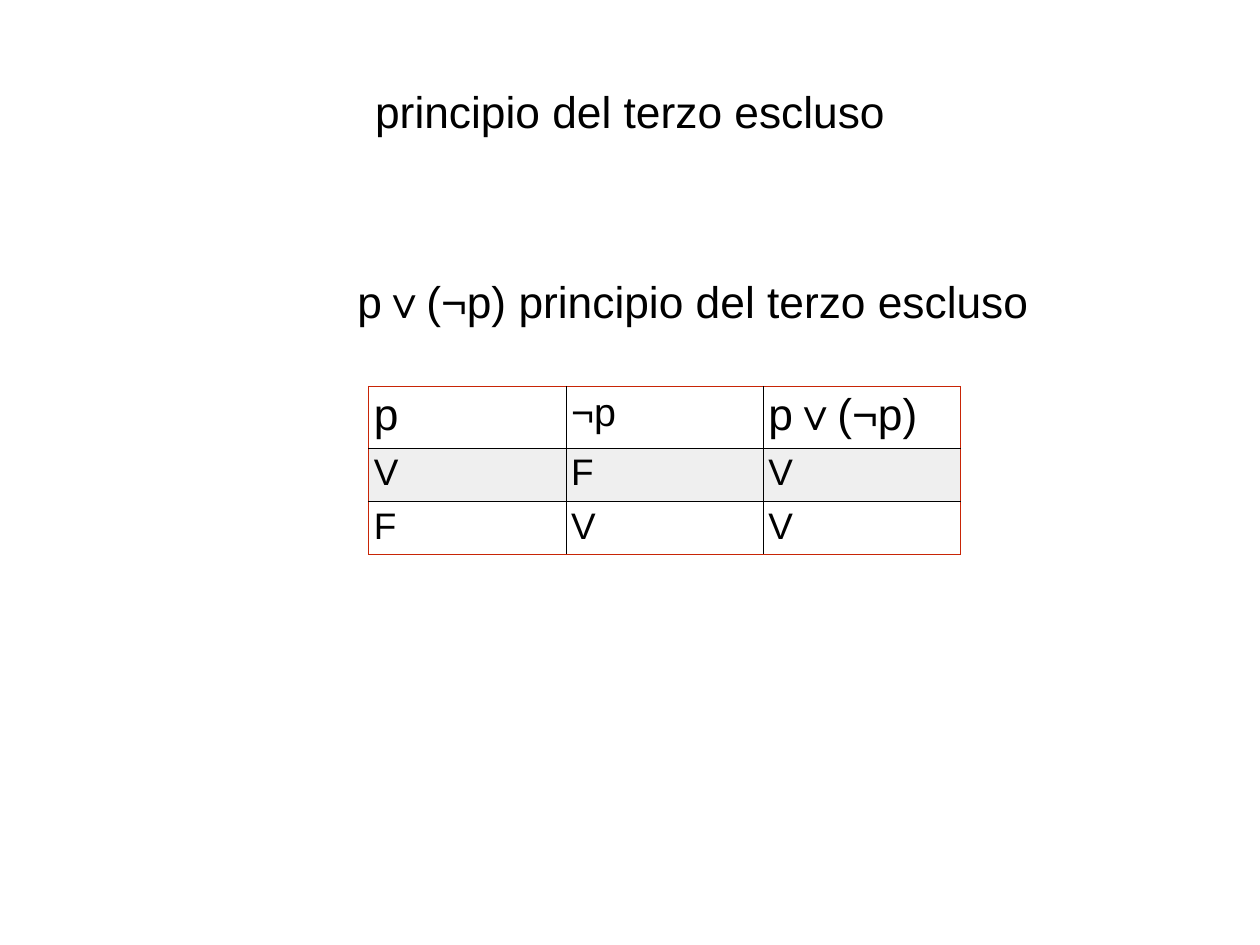
from dataclasses import dataclass

from pptx import Presentation
from pptx.dml.color import RGBColor
from pptx.enum.text import MSO_ANCHOR as Anchor, PP_ALIGN as Align
from pptx.oxml.ns import qn
from pptx.util import Inches, Pt
from lxml.etree import SubElement


@dataclass
class Theme:
    font: str = "Arial"
    ink: str = "000000"
    frame: str = "C82506"
    band: str = "EFEFEF"
    heading_size: int = 36
    negation_size: int = 32
    value_size: int = 30
    border: float = 0.25


theme = Theme()


def add_text(paragraph, text, size):
    run = paragraph.add_run()
    run.text = text
    run.font.name = theme.font
    run.font.size = Pt(size)
    run.font.color.rgb = RGBColor.from_string(theme.ink)


def add_border(cell, side, color):
    line = SubElement(cell._tc.get_or_add_tcPr(), qn(f"a:{side}"), w=str(Pt(theme.border)))
    fill = SubElement(line, qn("a:solidFill"))
    SubElement(fill, qn("a:srgbClr"), val=color)


presentation = Presentation()
presentation.slide_width = Inches(14.22)
presentation.slide_height = Inches(10.67)
slide = presentation.slides.add_slide(presentation.slide_layouts[6])

# Title and formula: text, left, top, height, anchor, left inset, top inset
texts = [
    ("principio del terzo escluso", 1.04, 0.49, 1.53, Anchor.MIDDLE, 0, 0),
    ("p∨(¬p) principio del terzo escluso", 1.28, 2.03, 6.6, Anchor.TOP, 0.94, 1.53),
]
for text, left, top, height, anchor, inset_left, inset_top in texts:
    box = slide.shapes.add_textbox(Inches(left), Inches(top), Inches(12.14), Inches(height))
    frame = box.text_frame
    frame.word_wrap = True
    frame.vertical_anchor = anchor
    frame.margin_left, frame.margin_top = Inches(inset_left), Inches(inset_top)
    frame.margin_right = frame.margin_bottom = 0
    paragraph = frame.paragraphs[0]
    paragraph.alignment = Align.CENTER
    add_text(paragraph, text, theme.heading_size)

# Truth table
truth_rows = [
    ["p", "¬p", "p∨(¬p)"],
    ["V", "F", "V"],
    ["F", "V", "V"],
]
header_sizes = [theme.heading_size, theme.negation_size, theme.heading_size]
last = len(truth_rows) - 1
table = slide.shapes.add_table(
    3, 3, Inches(4.16), Inches(4.36), Inches(6.68), Inches(0.91)
).table
table.first_row = table.horz_banding = False

for row, values in enumerate(truth_rows):
    for column, value in enumerate(values):
        cell = table.cell(row, column)
        cell.margin_left = cell.margin_right = Inches(0.06)
        cell.margin_top = cell.margin_bottom = Inches(0.05)
        size = header_sizes[column] if row == 0 else theme.value_size
        add_text(cell.text_frame.paragraphs[0], value, size)

        # Red outer frame, black inner lines
        outer_sides = {
            "lnL": column == 0,
            "lnR": column == last,
            "lnT": row == 0,
            "lnB": row == last,
        }
        for side, is_outer in outer_sides.items():
            add_border(cell, side, theme.frame if is_outer else theme.ink)

        # Grey band on the middle row
        if row == 1:
            cell.fill.solid()
            cell.fill.fore_color.rgb = RGBColor.from_string(theme.band)
        else:
            cell.fill.background()

presentation.save("out.pptx")
